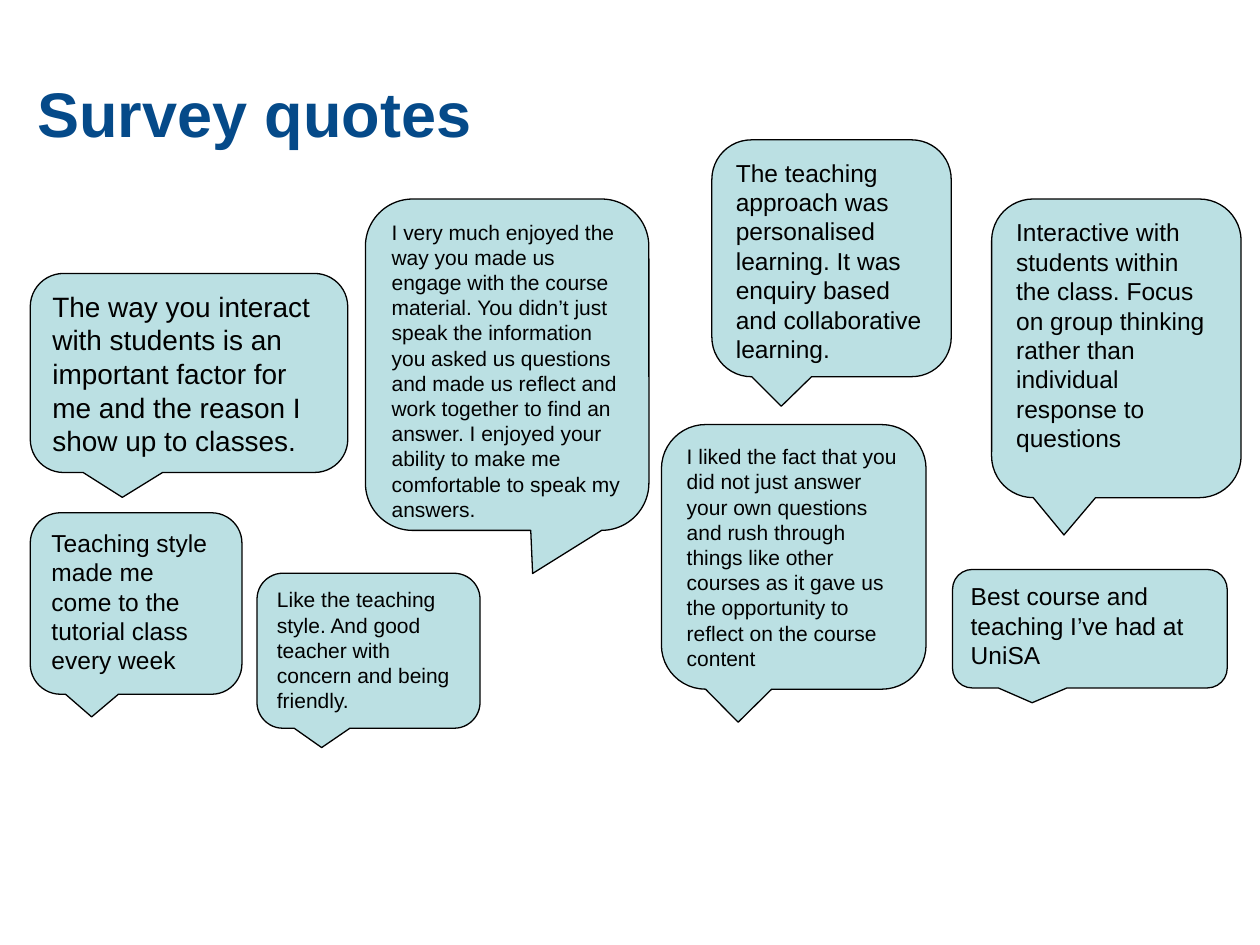
from pptx import Presentation
from pptx.dml.color import RGBColor
from pptx.enum.shapes import MSO_SHAPE
from pptx.enum.text import MSO_ANCHOR, PP_ALIGN
from pptx.util import Inches, Pt

CALLOUT = MSO_SHAPE.ROUNDED_RECTANGULAR_CALLOUT
TOP = MSO_ANCHOR.TOP
LEFT = PP_ALIGN.LEFT

TITLE = "Survey quotes"
NAVY, BLACK, PALE_TEAL = "054A89", "000000", "BBE0E3"
TAIL = (-0.21, 0.625)  # tail tip from the bubble's centre, as shares of its size
CORNER = 0.167

# left, top, width, height in inches; font size; quote; optional tail
QUOTES = [
    (0.24, 2.17, 2.52, 1.58, 16,
     "The way you interact with students is an important factor for me "
     "and the reason I show up to classes."),
    (2.04, 4.55, 1.77, 1.23, 12,
     "Like the teaching style. And good teacher with concern and being friendly."),
    (7.87, 1.58, 1.98, 2.37, 14,
     "Interactive with students within the class. Focus on group thinking "
     "rather than individual response to questions"),
    (0.24, 4.07, 1.68, 1.44, 14,
     "Teaching style made me come to the tutorial class every week"),
    (5.25, 3.37, 2.1, 2.1, 12,
     "I liked the fact that you did not just answer your own questions and rush "
     "through things like other courses as it gave us the opportunity to reflect "
     "on the course content"),
    (5.65, 1.11, 1.9, 1.88, 14,
     "The teaching approach was personalised learning. It was enquiry based "
     "and collaborative learning."),
    (2.9, 1.58, 2.25, 2.63, 12,
     "I very much enjoyed the way you made us engage with the course material. "
     "You didn’t just speak the information you asked us questions and made us "
     "reflect and work together to find an answer. I enjoyed your ability to make "
     "me comfortable to speak my answers.", (0.09, 0.63)),
    (7.56, 4.52, 2.18, 0.94, 14,
     "Best course and teaching I’ve had at UniSA"),
]


def rgb(value):
    return RGBColor.from_string(value)


def write(sp, text, size, color=BLACK, bold=False, spacing=None):
    tf = sp.text_frame
    tf.word_wrap = True
    tf.vertical_anchor = TOP
    p = tf.paragraphs[0]
    p.alignment = LEFT
    p.line_spacing = spacing
    r = p.add_run()
    r.text = text
    r.font.name = "Arial"
    r.font.size = Pt(size)
    r.font.bold = bold
    r.font.color.rgb = rgb(color)


def add_bubble(slide, left, top, width, height, size, quote, tail=TAIL):
    sp = slide.shapes.add_shape(CALLOUT, *map(Inches, (left, top, width, height)))
    sp.shadow.inherit = False
    for i, value in enumerate((*tail, CORNER)):
        sp.adjustments[i] = value
    sp.fill.solid()
    sp.fill.fore_color.rgb = rgb(PALE_TEAL)
    sp.line.color.rgb = rgb(BLACK)
    sp.line.width = Pt(0.75)
    write(sp, quote, size)


def main():
    prs = Presentation()
    prs.slide_width, prs.slide_height = Inches(10), Inches(7.5)
    slide = prs.slides.add_slide(prs.slide_layouts[6])
    title = slide.shapes.add_textbox(*map(Inches, (0.2, 0.61, 9.07, 0.71)))
    write(title, TITLE, 36, color=NAVY, bold=True, spacing=0.9)
    for quote in QUOTES:
        add_bubble(slide, *quote)
    prs.save("out.pptx")


if __name__ == "__main__":
    main()
